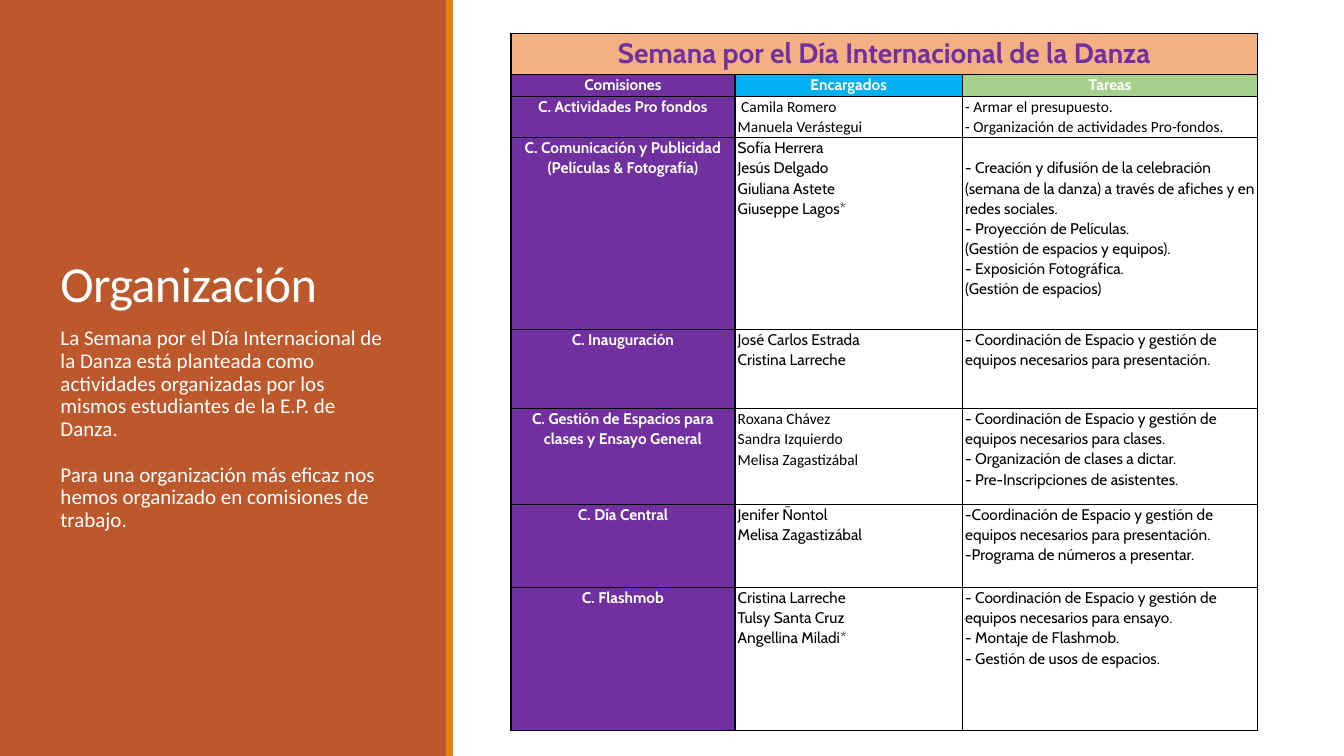
import pptx
import pptx.util
import pptx.dml.color
import pptx.enum.shapes
import pptx.enum.text
import pptx.oxml
import pptx.oxml.ns

Pt = pptx.util.Pt
RGBColor = pptx.dml.color.RGBColor
ALIGN = pptx.enum.text.PP_ALIGN
ANCHOR = pptx.enum.text.MSO_ANCHOR
qn = pptx.oxml.ns.qn

RUST = RGBColor(0xBD, 0x58, 0x2C)
ORANGE = RGBColor(0xE4, 0x83, 0x12)
WHITE = RGBColor(0xFF, 0xFF, 0xFF)
BLACK = RGBColor(0x00, 0x00, 0x00)
PURPLE = RGBColor(0x70, 0x30, 0xA0)
PEACH = RGBColor(0xF4, 0xB0, 0x83)
BLUE = RGBColor(0x00, 0xB0, 0xF0)
GREEN = RGBColor(0xA8, 0xD0, 0x8D)


def write(frame, text, size=11, font="Cabin", color=BLACK, bold=False,
          align=ALIGN.LEFT, line=1.07, after=0):
    frame.word_wrap = True
    for i, part in enumerate(text.split("\n")):
        para = frame.add_paragraph() if i else frame.paragraphs[0]
        para.alignment = align
        para.line_spacing = line
        para.space_before = Pt(0)
        para.space_after = Pt(after)
        run = para.add_run()
        run.text = part
        run.font.size = Pt(size)
        run.font.name = font
        run.font.bold = bold
        run.font.color.rgb = color


deck = pptx.Presentation()
deck.slide_width = Pt(960)
deck.slide_height = Pt(540)
slide = deck.slides.add_slide(deck.slide_layouts[7])
title = slide.shapes.title
spare, body = slide.placeholders[1], slide.placeholders[2]
spare.element.getparent().remove(spare.element)

for left, width, color in [(0, 319, RUST), (318.5, 5, ORANGE)]:
    panel = slide.shapes.add_shape(pptx.enum.shapes.MSO_SHAPE.RECTANGLE,
                                   Pt(left), Pt(0), Pt(width), Pt(540))
    panel.shadow.inherit = False
    panel.fill.solid()
    panel.fill.fore_color.rgb = color
    panel.line.fill.background()
    title.element.addprevious(panel.element)

for holder, top, height, anchor in [(title, 46.8, 180, ANCHOR.BOTTOM),
                                    (body, 230.4, 266.4, ANCHOR.TOP)]:
    holder.left, holder.top = Pt(36), Pt(top)
    holder.width, holder.height = Pt(252), Pt(height)
    holder.text_frame.vertical_anchor = anchor
    holder.text_frame.auto_size = pptx.enum.text.MSO_AUTO_SIZE.NONE

write(title.text_frame, "Organización", size=36, font="Calibri", color=WHITE, line=0.85)
for mark in title.element.iter(qn("a:rPr")):
    mark.set("spc", "-50")
write(body.text_frame,
      "La Semana por el Día Internacional de la Danza está planteada como "
      "actividades organizadas por los mismos estudiantes de la E.P. de Danza.\n"
      "Para una organización más eficaz nos hemos organizado en comisiones de trabajo.",
      size=15, font="Calibri", color=WHITE, line=0.9, after=16.4)

rows = [
    ("Semana por el Día Internacional de la Danza", "", ""),
    ("Comisiones", "Encargados", "Tareas"),
    ("C. Actividades Pro fondos",
     " Camila Romero\nManuela Verástegui",
     "- Armar el presupuesto.\n- Organización de actividades Pro-fondos."),
    ("C. Comunicación y Publicidad\n(Películas & Fotografía)",
     "Sofía Herrera\nJesús Delgado\nGiuliana Astete\nGiuseppe Lagos*",
     "- Creación y difusión de la celebración (semana de la danza) a través de "
     "afiches y en redes sociales.\n- Proyección de Películas.\n"
     "(Gestión de espacios y equipos).\n- Exposición Fotográfica.\n(Gestión de espacios)"),
    ("C. Inauguración",
     "José Carlos Estrada\nCristina Larreche",
     "- Coordinación de Espacio y gestión de equipos necesarios para presentación."),
    ("C. Gestión de Espacios para clases y Ensayo General",
     "Roxana Chávez\nSandra Izquierdo\nMelisa Zagastizábal",
     "- Coordinación de Espacio y gestión de equipos necesarios para clases.\n"
     "- Organización de clases a dictar.\n- Pre-Inscripciones de asistentes."),
    ("C. Día Central",
     "Jenifer Ñontol\nMelisa Zagastizábal",
     "-Coordinación de Espacio y gestión de equipos necesarios para presentación.\n"
     "-Programa de números a presentar."),
    ("C. Flashmob",
     "Cristina Larreche\nTulsy Santa Cruz\nAngellina Miladi*",
     "- Coordinación de Espacio y gestión de equipos necesarios para ensayo.\n"
     "- Montaje de Flashmob.\n- Gestión de usos de espacios."),
]
widths = [160, 162.5, 211]
heights = [29.3, 15.7, 29.3, 137.1, 56.4, 68.6, 59.3, 102.1]
heads = [PURPLE, BLUE, GREEN]
plain = {(2, 1), (2, 2), (5, 1)}

grid = slide.shapes.add_table(len(rows), len(widths), Pt(365), Pt(24),
                              Pt(sum(widths)), Pt(sum(heights)))
table = grid.table
table.first_row = False
table.horz_banding = False
for col, width in zip(table.columns, widths):
    col.width = Pt(width)
for row, height in zip(table.rows, heights):
    row.height = Pt(height)
table.cell(0, 0).merge(table.cell(0, 2))

for r, texts in enumerate(rows):
    for c, text in enumerate(texts):
        cell = table.cell(r, c)
        cell.margin_left = cell.margin_right = Pt(2)
        cell.margin_top = cell.margin_bottom = Pt(0)
        shade = PEACH if r == 0 else heads[c] if r == 1 or c == 0 else None
        if shade is None:
            cell.fill.background()
        else:
            cell.fill.solid()
            cell.fill.fore_color.rgb = shade
        if r == 0 and c == 0:
            write(cell.text_frame, text, size=20, color=PURPLE, bold=True, align=ALIGN.CENTER)
        elif r and shade is not None:
            write(cell.text_frame, text, color=WHITE, bold=True, align=ALIGN.CENTER)
        elif r:
            write(cell.text_frame, text, font="Calibri" if (r, c) in plain else "Cabin")
table.cell(3, 2).margin_top = Pt(14.4)

for props in grid.element.iter(qn("a:tcPr")):
    for i, side in enumerate(["lnL", "lnR", "lnT", "lnB"]):
        props.insert(i, pptx.oxml.parse_xml(
            f'<a:{side} {pptx.oxml.ns.nsdecls("a")} w="{Pt(1)}"><a:solidFill>'
            f'<a:srgbClr val="{BLACK}"/></a:solidFill></a:{side}>'))

deck.save("out.pptx")
